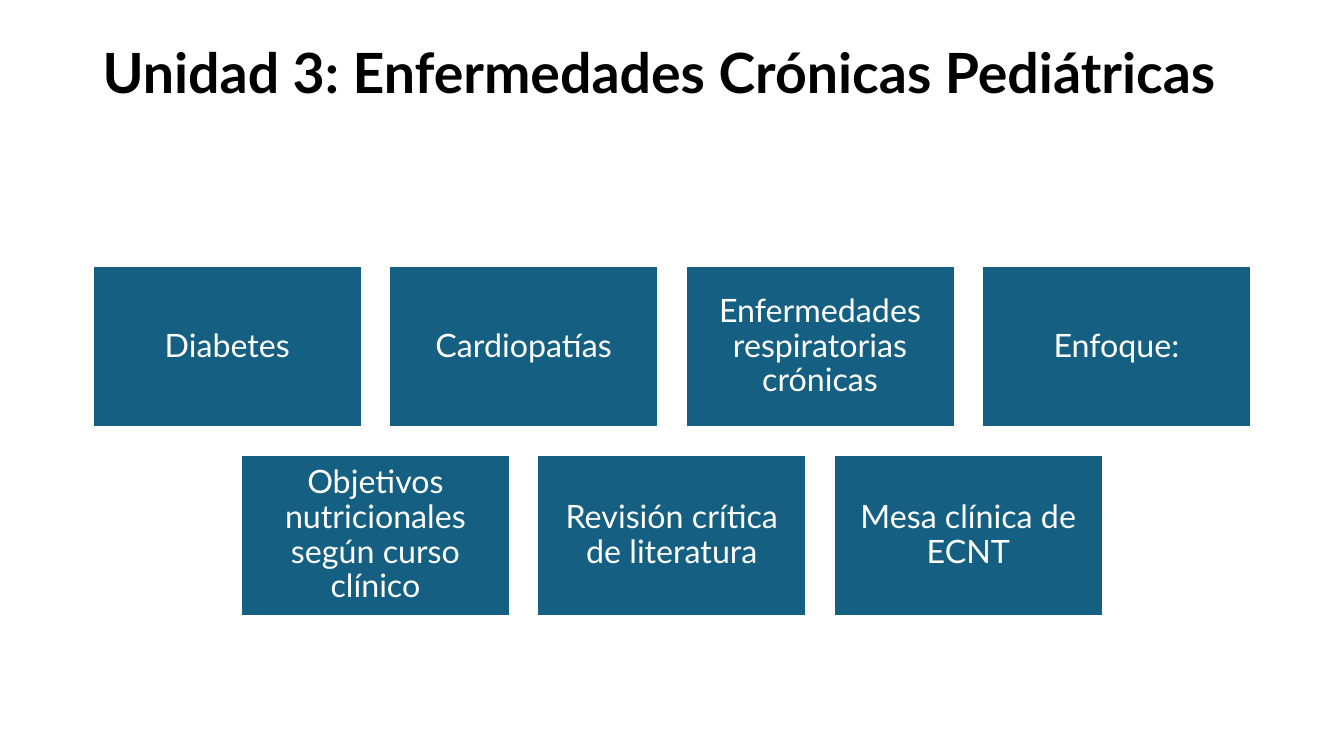
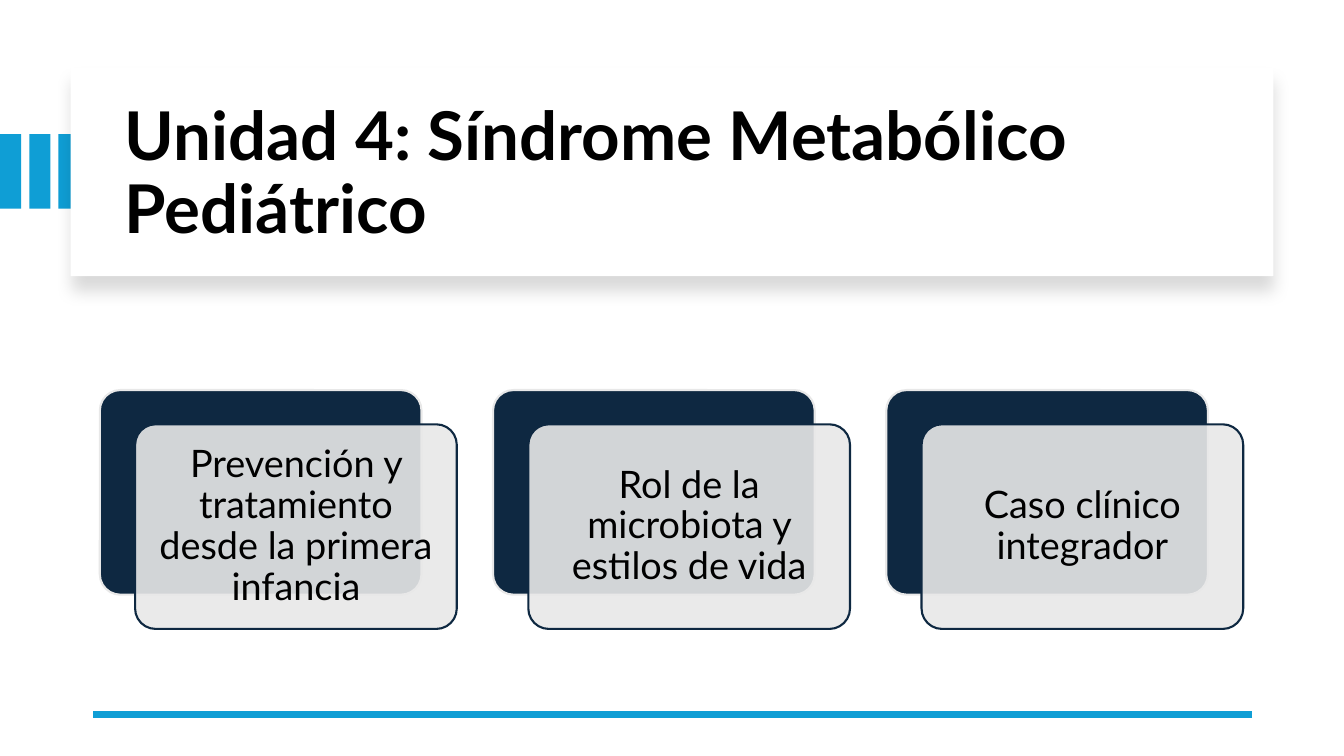
import pptx
import pptx.util
import pptx.dml.color
import pptx.enum.shapes
import pptx.enum.text
import pptx.oxml
import pptx.oxml.ns
import lxml.etree

Inches = pptx.util.Inches
Pt = pptx.util.Pt
RGBColor = pptx.dml.color.RGBColor
Kind = pptx.enum.shapes.MSO_SHAPE
Align = pptx.enum.text.PP_ALIGN
Anchor = pptx.enum.text.MSO_ANCHOR
qn = pptx.oxml.ns.qn

BLACK = RGBColor(0x00, 0x00, 0x00)
WHITE = RGBColor(0xFF, 0xFF, 0xFF)
TEAL = RGBColor(0x15, 0x60, 0x82)
BLUE = RGBColor(0x0F, 0x9E, 0xD5)
NAVY = RGBColor(0x0E, 0x28, 0x41)
GREY = RGBColor(0xE8, 0xE8, 0xE8)
FONT = "Lato"
WIDTH = 13.33


def block(slide, kind, left, top, width, height, fill, line=None):
    shape = slide.shapes.add_shape(
        kind, Inches(left), Inches(top), Inches(width), Inches(height))
    shape.shadow.inherit = False
    shape.fill.solid()
    shape.fill.fore_color.rgb = fill
    if line is None:
        shape.line.fill.background()
    else:
        shape.line.color.rgb = line
        shape.line.width = Pt(1.5)
    if kind == Kind.ROUNDED_RECTANGLE:
        shape.adjustments[0] = 0.1
    return shape


def write(shape, text, size, color, align=Align.CENTER, bold=False,
          anchor=Anchor.MIDDLE, inset=(0.1, 0.1)):
    frame = shape.text_frame
    frame.word_wrap = True
    frame.vertical_anchor = anchor
    frame.margin_left = frame.margin_right = Inches(inset[0])
    frame.margin_top = frame.margin_bottom = Inches(inset[1])
    para = frame.paragraphs[0]
    para.alignment = align
    para.line_spacing = 0.9
    run = para.add_run()
    run.text = text
    run.font.name = FONT
    run.font.size = Pt(size)
    run.font.bold = bold
    run.font.color.rgb = color


deck = pptx.Presentation()
deck.slide_width = Inches(WIDTH)
deck.slide_height = Inches(7.5)
blank = deck.slide_layouts[6]
first = deck.slides.add_slide(blank)
second = deck.slides.add_slide(blank)

bar_w, bar_gap = 0.21, 0.08
for i in range(3):
    block(second, Kind.RECTANGLE, i * (bar_w + bar_gap), 1.33, bar_w, 0.74, BLUE)

panel = block(second, Kind.RECTANGLE, 0.7, 0.67, 11.93, 2.07, WHITE)
effects = panel._element.spPr.find(qn("a:effectLst"))
shadow = lxml.etree.SubElement(
    effects, qn("a:outerShdw"), blurRad=str(Pt(11)), dist=str(Pt(10)),
    dir="5400000", algn="t", rotWithShape="0")
shade = lxml.etree.SubElement(shadow, qn("a:srgbClr"), val=str(BLACK))
lxml.etree.SubElement(shade, qn("a:alpha"), val="15000")

titles = [
    (first, "Unidad 3: Enfermedades Crónicas Pediátricas", 39.6,
     (0.92, 0.4, 11.5, 1.45), Anchor.TOP),
    (second, "Unidad 4: Síndrome Metabólico Pediátrico", 48,
     (1.14, 0.89, 11.13, 1.7), Anchor.MIDDLE),
]
for slide, text, size, place, anchor in titles:
    title = slide.shapes.add_textbox(*[Inches(n) for n in place])
    write(title, text, size, BLACK, Align.LEFT, True, anchor, (0.1, 0.05))

rows = [
    ["Diabetes", "Cardiopatías", "Enfermedades respiratorias crónicas",
     "Enfoque:"],
    ["Objetivos nutricionales según curso clínico",
     "Revisión crítica de literatura", "Mesa clínica de ECNT"],
]
tile_w, tile_h, gap = 2.67, 1.6, 0.27
for r, row in enumerate(rows):
    start = (WIDTH - len(row) * (tile_w + gap) + gap) / 2
    for c, text in enumerate(row):
        tile = block(first, Kind.RECTANGLE, start + c * (tile_w + gap),
                     2.64 + r * (tile_h + gap), tile_w, tile_h, TEAL, WHITE)
        write(tile, text, 23, WHITE)

rule = second.shapes.add_connector(
    pptx.enum.shapes.MSO_CONNECTOR.STRAIGHT,
    Inches(12.42), Inches(7.09), Inches(0.92), Inches(7.09))
rule.line.color.rgb = BLUE
rule.line.width = Pt(4.5)
lxml.etree.SubElement(rule._element.spPr, qn("a:effectLst"))

cards = ["Prevención y tratamiento desde la primera infancia",
         "Rol de la microbiota y estilos de vida",
         "Caso clínico integrador"]
card_w, card_h, pitch = 3.19, 2.03, 3.9
for i, text in enumerate(cards):
    left = 0.99 + i * pitch
    block(second, Kind.ROUNDED_RECTANGLE, left, 3.87, card_w, card_h, NAVY, GREY)
    card = block(second, Kind.ROUNDED_RECTANGLE, left + 0.35, 4.21,
                 card_w, card_h, GREY, NAVY)
    tint = card._element.spPr.find(qn("a:solidFill")).find(qn("a:srgbClr"))
    lxml.etree.SubElement(tint, qn("a:alpha"), val="90000")
    write(card, text, 27, BLACK, inset=(0.11, 0.11))

deck.save("out.pptx")
